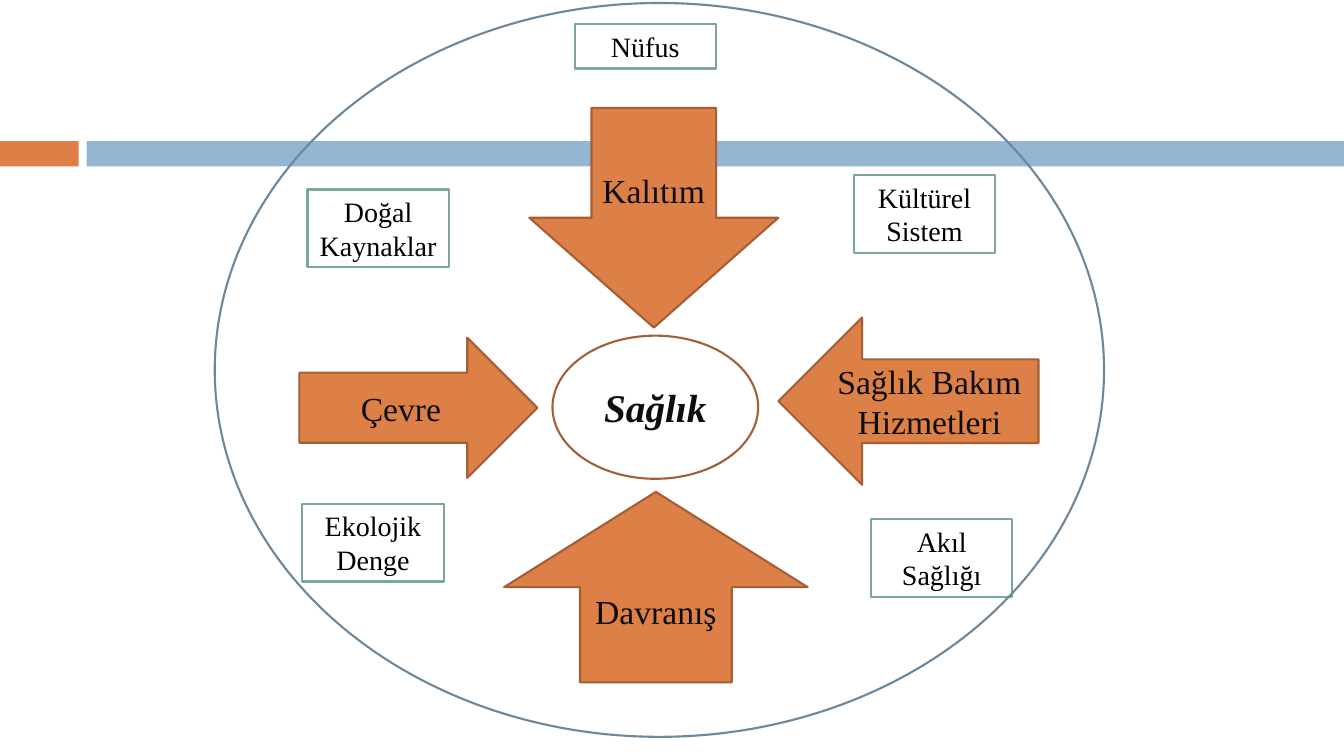
from pptx import Presentation
from pptx.dml.color import RGBColor
from pptx.enum.shapes import MSO_SHAPE as Kind
from pptx.enum.text import MSO_ANCHOR as Anchor, PP_ALIGN as Align
from pptx.util import Inches, Pt

COLORS = {
    "orange": "DD8047", "blue": "94B6D2", "white": "FFFFFF",
    "brown": "A35F35", "green": "7BA79D", "slate": "6D879B",
    "ink": "0D0D0D", "black": "000000",
}
FONT = "Times New Roman"
BANDS = [("orange", 0, 0.78), ("blue", 0.86, 12.47)]
BAND_TOP, BAND_HEIGHT = 1.4, 0.25
ARROWS = [
    ("Çevre", Kind.RIGHT_ARROW, (2.97, 3.35, 2.36, 1.39)),
    ("Kalıtım", Kind.DOWN_ARROW, (5.25, 1.07, 2.47, 2.18)),
    ("Davranış", Kind.UP_ARROW, (5, 4.88, 3.01, 1.89)),
    ("Sağlık Bakım Hizmetleri", Kind.LEFT_ARROW, (7.72, 3.15, 2.58, 1.66)),
]
CENTER = ("Sağlık", (5.48, 3.33, 2.04, 1.42))
LABEL_WIDTH = 1.4
LABELS = [
    ("Nüfus", 5.7, 0.24, 0.44),
    ("Doğal Kaynaklar", 3.05, 1.88, 0.77),
    ("Ekolojik Denge", 3, 5, 0.77),
    ("Akıl Sağlığı", 8.64, 5.15, 0.77),
    ("Kültürel Sistem", 8.47, 1.74, 0.77),
]
OUTER_RING = (2.13, 0.03, 8.82, 7.28)


def color(name):
    return RGBColor.from_string(COLORS[name])


def add_shape(page, kind, box, fill=None, line=None):
    shape = page.shapes.add_shape(kind, *[Inches(length) for length in box])
    shape.shadow.inherit = False
    if fill:
        shape.fill.solid()
        shape.fill.fore_color.rgb = color(fill)
    else:
        shape.fill.background()
    if line:
        shape.line.color.rgb = color(line)
        shape.line.width = Pt(1.5)
    else:
        shape.line.fill.background()
    return shape


def write(shape, text, size, ink, anchor=Anchor.MIDDLE, inset=0.05, strong=False):
    frame = shape.text_frame
    frame.word_wrap = True
    frame.vertical_anchor = anchor
    frame.margin_left = frame.margin_right = Inches(inset)
    para = frame.paragraphs[0]
    para.alignment = Align.CENTER
    span = para.add_run()
    span.text = text
    span.font.name = FONT
    span.font.size = Pt(size)
    span.font.bold = span.font.italic = strong
    span.font.color.rgb = color(ink)


def main():
    deck = Presentation()
    deck.slide_width, deck.slide_height = Inches(13.33), Inches(7.5)
    page = deck.slides.add_slide(deck.slide_layouts[6])

    for fill, left, width in BANDS:
        add_shape(page, Kind.RECTANGLE, (left, BAND_TOP, width, BAND_HEIGHT), fill)

    text, box = CENTER
    write(add_shape(page, Kind.OVAL, box, line="brown"), text, 28, "ink", strong=True)

    for text, kind, box in ARROWS:
        write(add_shape(page, kind, box, "orange", "brown"), text, 24, "ink")

    for text, left, top, height in LABELS:
        box = (left, top, LABEL_WIDTH, height)
        label = add_shape(page, Kind.RECTANGLE, box, "white", "green")
        write(label, text, 20, "black", Anchor.TOP, inset=0.1)

    add_shape(page, Kind.OVAL, OUTER_RING, line="slate")
    deck.save("out.pptx")


if __name__ == "__main__":
    main()
